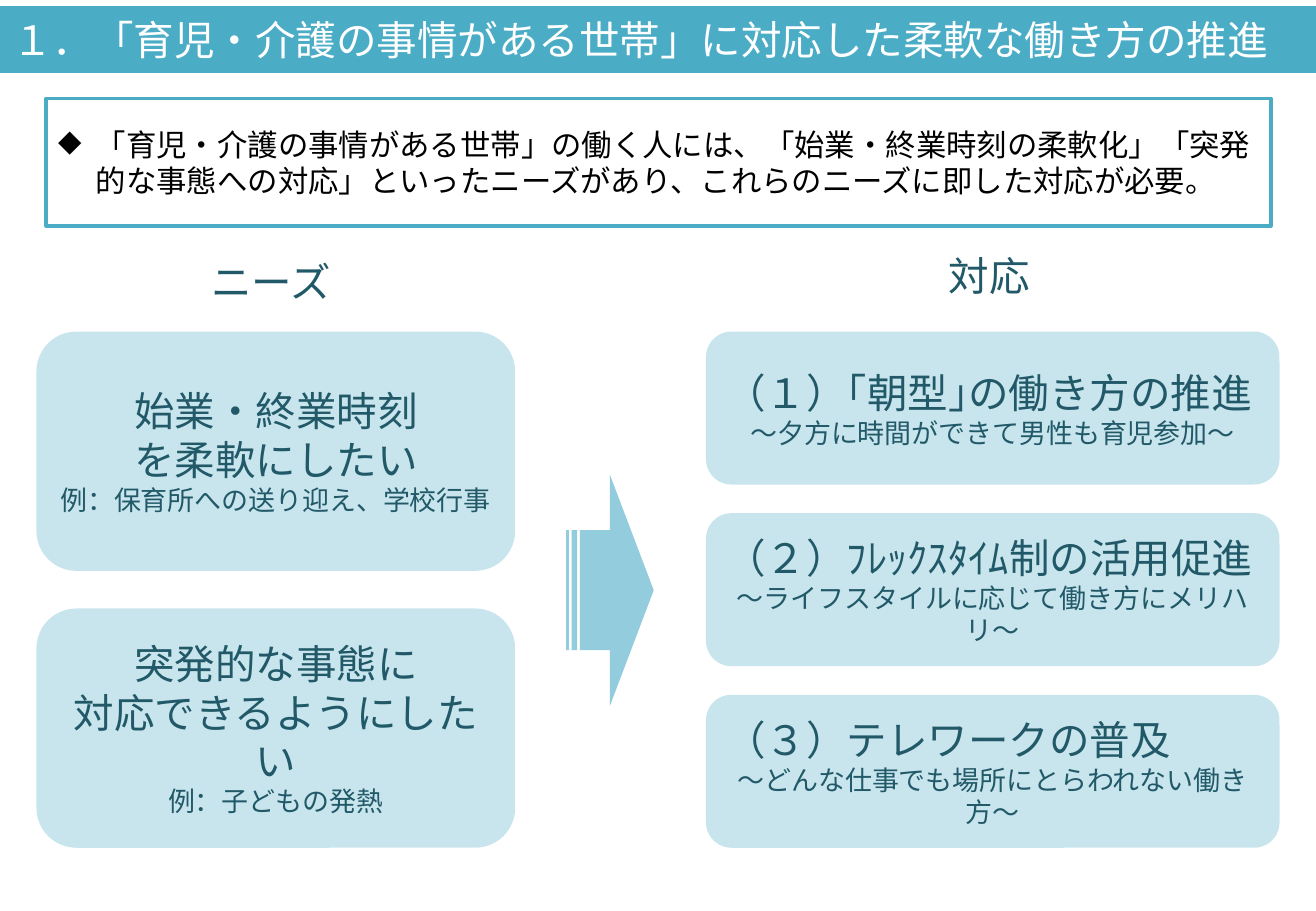
from lxml.etree import SubElement
from pptx import Presentation
from pptx.dml.color import RGBColor
from pptx.enum.shapes import MSO_SHAPE as Shape
from pptx.enum.text import MSO_ANCHOR as Anchor, MSO_AUTO_SIZE as AutoSize, PP_ALIGN as Align
from pptx.oxml.ns import qn
from pptx.util import Emu, Pt

EMU_PER_PX = 9144  # 100 px to the inch
TEAL = RGBColor(0x4B, 0xAC, 0xC6)
LIGHT_TEAL = RGBColor(0x93, 0xCD, 0xDD)
DARK_TEAL = RGBColor(0x21, 0x59, 0x68)
WHITE = RGBColor(0xFF, 0xFF, 0xFF)
BLACK = RGBColor(0, 0, 0)
NOTO, ARIAL, CALIBRI = "Noto Sans CJK JP", "Arial", "Calibri"

TITLE = "１．「育児・介護の事情がある世帯」に対応した柔軟な働き方の推進"
SUMMARY = ("「育児・介護の事情がある世帯」の働く人には、「始業・終業時刻の柔軟化」"
           "「突発的な事態への対応」といったニーズがあり、これらのニーズに即した対応が必要。")

# Each card: main lines, detail line, font of the detail line
NEEDS = [
    (["始業・終業時刻", "を柔軟にしたい"], "例：保育所への送り迎え、学校行事", ARIAL),
    (["突発的な事態に", "対応できるようにしたい"], "例：子どもの発熱", ARIAL),
]
RESPONSES = [
    (["（１）｢朝型｣の働き方の推進"], "～夕方に時間ができて男性も育児参加～", ARIAL),
    (["（２）ﾌﾚｯｸｽﾀｲﾑ制の活用促進"], "～ライフスタイルに応じて働き方にメリハリ～", ARIAL),
    (["（３）テレワークの普及"], "～どんな仕事でも場所にとらわれない働き方～", CALIBRI),
]
# Heading, heading box, cards, card left, width, height, alignment of main lines
COLUMNS = [
    ("ニーズ", (85, 194, 276, 75), NEEDS, 30, 394, 197, Align.CENTER),
    ("対応", (676, 189, 276, 75), RESPONSES, 581, 472, 126, Align.LEFT),
]
CARDS_TOP, CARDS_BOTTOM = 273, 698


def px(*lengths):
    return [Emu(round(length * EMU_PER_PX)) for length in lengths]


def write(shape, lines):
    """Fill a shape with one paragraph per (text, size, font, colour, alignment)."""
    frame = shape.text_frame
    frame.word_wrap = True
    frame.auto_size = AutoSize.NONE
    frame.vertical_anchor = Anchor.MIDDLE
    for i, (text, size, face, color, align) in enumerate(lines):
        paragraph = frame.add_paragraph() if i else frame.paragraphs[0]
        paragraph.alignment = align
        run = paragraph.add_run()
        run.text = text
        run.font.size = Pt(size)
        run.font.color.rgb = color
        run.font.name = face
        SubElement(run.font._element, qn("a:ea")).set("typeface", face)


def add_block(kind, box, fill=None, alpha=None):
    block = slide.shapes.add_shape(kind, *px(*box))
    block.shadow.inherit = False
    block.line.fill.background()
    if fill is None:
        block.fill.background()
        return block
    block.fill.solid()
    block.fill.fore_color.rgb = fill
    if alpha:
        color = block._element.spPr.find(".//" + qn("a:srgbClr"))
        SubElement(color, qn("a:alpha")).set("val", str(alpha * 1000))
    return block


def add_bullet(paragraph, symbol, indent):
    properties = paragraph._p.get_or_add_pPr()
    properties.set("marL", str(indent))
    properties.set("indent", str(-indent))
    SubElement(properties, qn("a:buChar")).set("char", symbol)


deck = Presentation()
deck.slide_width, deck.slide_height = px(1083, 750)
slide = deck.slides.add_slide(deck.slide_layouts[5])

title = slide.shapes.title
title.left, title.top, title.width, title.height = px(0, 5, 1083, 55)
title.fill.solid()
title.fill.fore_color.rgb = TEAL
write(title, [(TITLE, 24, NOTO, WHITE, Align.LEFT)])

summary = add_block(Shape.RECTANGLE, (38, 81, 1008, 105))
summary.line.color.rgb = TEAL
summary.line.width = Pt(2)
write(summary, [(SUMMARY, 18, CALIBRI, BLACK, Align.LEFT)])
add_bullet(summary.text_frame.paragraphs[0], "◆", px(31)[0])

for heading, heading_box, cards, left, width, height, align in COLUMNS:
    write(slide.shapes.add_textbox(*px(*heading_box)),
          [(heading, 24, NOTO, DARK_TEAL, Align.CENTER)])
    pitch = (CARDS_BOTTOM - CARDS_TOP - height) / (len(cards) - 1)
    for i, (main_lines, detail, detail_font) in enumerate(cards):
        card = add_block(Shape.ROUNDED_RECTANGLE,
                         (left, CARDS_TOP + i * pitch, width, height), LIGHT_TEAL, 50)
        lines = [(text, 24, NOTO, DARK_TEAL, align) for text in main_lines]
        write(card, lines + [(detail, 16, detail_font, DARK_TEAL, Align.CENTER)])

arrow = add_block(Shape.STRIPED_RIGHT_ARROW, (466, 391, 72, 190), LIGHT_TEAL)
arrow.adjustments[0] = 0.52
arrow.adjustments[1] = 0.5

deck.save("out.pptx")
